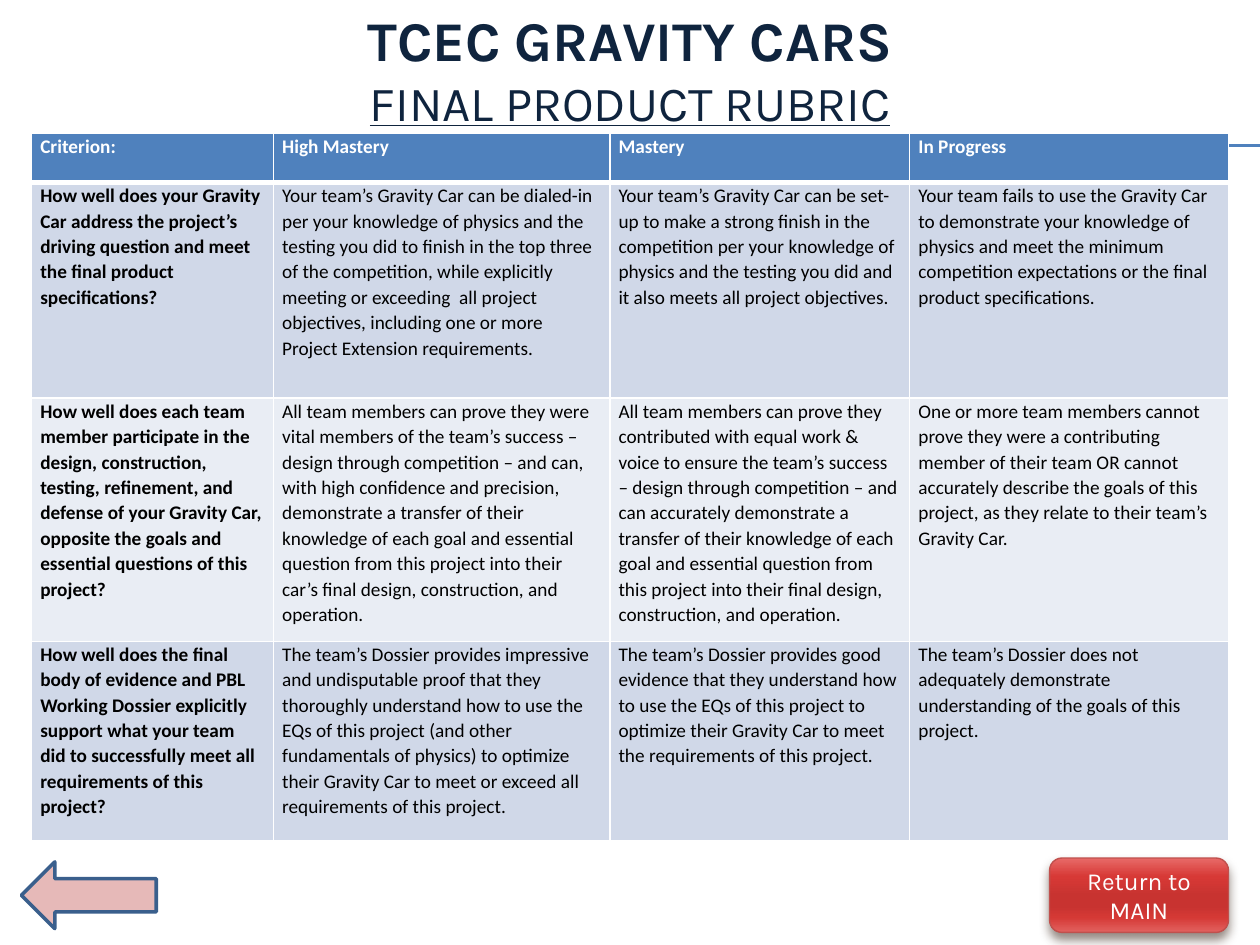
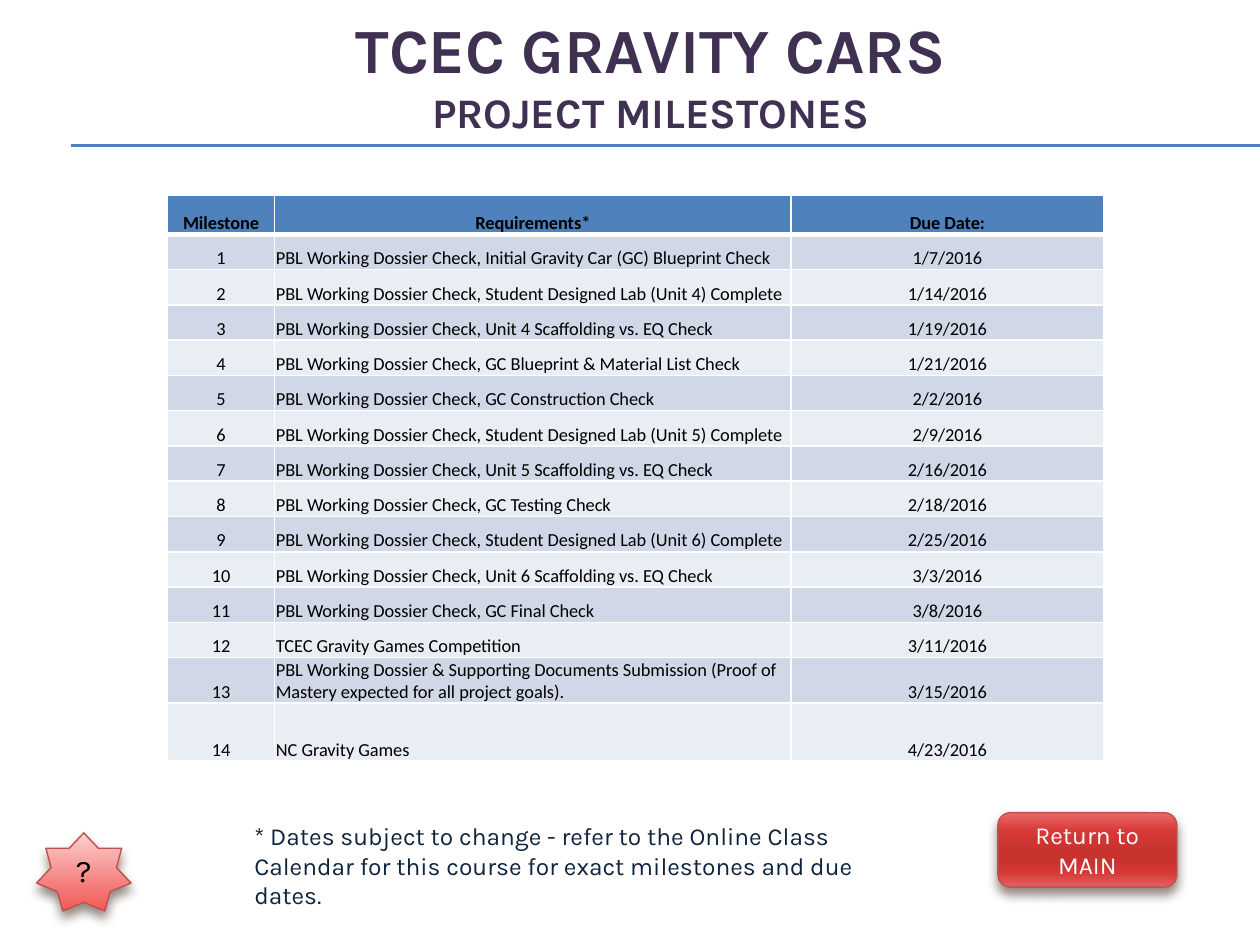
"""Build the gravity car rubric and milestone slides."""
from lxml import etree
from pptx import Presentation
from pptx.dml.color import RGBColor
from pptx.enum.shapes import MSO_CONNECTOR, MSO_SHAPE
from pptx.enum.text import MSO_ANCHOR, PP_ALIGN
from pptx.oxml import parse_xml
from pptx.oxml.ns import nsdecls, qn
from pptx.util import Inches, Pt

LEFT, CENTER = PP_ALIGN.LEFT, PP_ALIGN.CENTER
TOP, MIDDLE, BOTTOM = MSO_ANCHOR.TOP, MSO_ANCHOR.MIDDLE, MSO_ANCHOR.BOTTOM
STRAIGHT = MSO_CONNECTOR.STRAIGHT
ROUNDED, STAR, ARROW = MSO_SHAPE.ROUNDED_RECTANGLE, MSO_SHAPE.STAR_7_POINT, MSO_SHAPE.RIGHT_ARROW

HEADING_FONT, TABLE_FONT = "Karla", "Calibri"
BLUE, NAVY, PURPLE, RED = "4F81BD", "0F243E", "403152", "C0504D"
WHITE, BLACK = "FFFFFF", "000000"
BANDS = ["E9EDF4", "D0D8E8"]
BUTTON_STOPS = [(0, "E86A68"), (25, "D73936"), (50, "C83330"),
                (65, "C83330"), (80, "D53935"), (100, "E26260")]
STAR_STOPS = [(0, "FBD0D0"), (72, "F37876"), (100, "F55956")]
rgb = RGBColor.from_string


def style_text(frame, size, colour, font=HEADING_FONT, bold=False, align=LEFT, anchor=TOP):
    frame.word_wrap = True
    frame.vertical_anchor = anchor
    for paragraph in frame.paragraphs:
        paragraph.alignment = align
        for run in paragraph.runs:
            run.font.size = Pt(size)
            run.font.name = font
            run.font.bold = bold
            run.font.color.rgb = rgb(colour)


def add_glossy(slide, preset, box, stops, label, size, colour):
    glossy = slide.shapes.add_shape(preset, *map(Inches, box))
    glossy.fill.gradient()
    glossy.fill.gradient_angle = 270
    stop_list = glossy.element.spPr.find(".//" + qn("a:gsLst"))
    for old_stop in list(stop_list):
        stop_list.remove(old_stop)
    for position, stop_colour in stops:
        stop = etree.SubElement(stop_list, qn("a:gs"), pos=str(position * 1000))
        etree.SubElement(stop, qn("a:srgbClr"), val=stop_colour)
    glossy.line.color.rgb = rgb(RED)
    glossy.line.width = Pt(0.79)
    glossy.shadow.inherit = False
    glossy.element.spPr.find(qn("a:effectLst")).append(parse_xml(
        f'<a:outerShdw {nsdecls("a")} blurRad="{Pt(6)}" dist="{Pt(4)}" dir="5400000" rotWithShape="0">'
        '<a:srgbClr val="4E3B30"><a:alpha val="60000"/></a:srgbClr></a:outerShdw>'))
    glossy.text_frame.text = label
    style_text(glossy.text_frame, size, colour, align=CENTER, anchor=MIDDLE)


rubric = [
    ["Criterion:", "High Mastery", "Mastery", "In Progress"],
    ["How well does your Gravity Car address the project’s driving question and meet the final product "
     "specifications?",
     "Your team’s Gravity Car can be dialed-in per your knowledge of physics and the testing you did to "
     "finish in the top three of the competition, while explicitly meeting or exceeding  all project "
     "objectives, including one or more Project Extension requirements.",
     "Your team’s Gravity Car can be set-up to make a strong finish in the competition per your knowledge "
     "of physics and the testing you did and it also meets all project objectives.",
     "Your team fails to use the Gravity Car to demonstrate your knowledge of physics and meet the minimum "
     "competition expectations or the final product specifications."],
    ["How well does each team member participate in the design, construction, testing, refinement, and "
     "defense of your Gravity Car, opposite the goals and essential questions of this project?",
     "All team members can prove they were vital members of the team’s success – design through competition "
     "– and can, with high confidence and precision, demonstrate a transfer of their knowledge of each goal "
     "and essential question from this project into their car’s final design, construction, and operation.",
     "All team members can prove they contributed with equal work & voice to ensure the team’s success – "
     "design through competition – and can accurately demonstrate a transfer of their knowledge of each "
     "goal and essential question from this project into their final design, construction, and operation.",
     "One or more team members cannot prove they were a contributing member of their team OR cannot "
     "accurately describe the goals of this project, as they relate to their team’s Gravity Car."],
    ["How well does the final body of evidence and PBL Working Dossier explicitly support what your team "
     "did to successfully meet all requirements of this project?",
     "The team’s Dossier provides impressive and undisputable proof that they thoroughly understand how to "
     "use the EQs of this project (and other fundamentals of physics) to optimize their Gravity Car to meet "
     "or exceed all requirements of this project.",
     "The team’s Dossier provides good evidence that they understand how to use the EQs of this project to "
     "optimize their Gravity Car to meet the requirements of this project.",
     "The team’s Dossier does not adequately demonstrate understanding of the goals of this project."],
]

CHECK = "PBL Working Dossier Check, "
deadlines = [
    (CHECK + "Initial Gravity Car (GC) Blueprint Check", "1/7/2016"),
    (CHECK + "Student Designed Lab (Unit 4) Complete", "1/14/2016"),
    (CHECK + "Unit 4 Scaffolding vs. EQ Check", "1/19/2016"),
    (CHECK + "GC Blueprint & Material List Check", "1/21/2016"),
    (CHECK + "GC Construction Check", "2/2/2016"),
    (CHECK + "Student Designed Lab (Unit 5) Complete", "2/9/2016"),
    (CHECK + "Unit 5 Scaffolding vs. EQ Check", "2/16/2016"),
    (CHECK + "GC Testing Check", "2/18/2016"),
    (CHECK + "Student Designed Lab (Unit 6) Complete", "2/25/2016"),
    (CHECK + "Unit 6 Scaffolding vs. EQ Check", "3/3/2016"),
    (CHECK + "GC Final Check", "3/8/2016"),
    ("TCEC Gravity Games Competition", "3/11/2016"),
    ("PBL Working Dossier & Supporting Documents Submission (Proof of Mastery expected for all project "
     "goals).", "3/15/2016"),
    ("NC Gravity Games", "4/23/2016"),
]
milestones = [["Milestone", "Requirements*", "Due Date:"]]
milestones += [[str(number), *deadline] for number, deadline in enumerate(deadlines, 1)]

pages = [
    dict(subtitle="FINAL PRODUCT RUBRIC", title_box=(0.5, -0.08, 9, 1.25), title_colour=NAVY,
         title_sizes=(32, 28), subtitle_bold=False, rows=rubric, origin=(0.25, 1.06),
         widths=[1.92, 2.67, 2.38, 2.53], heights=[0.39, 1.71, 1.93, 1.58],
         insets=(0.07, 0, 0.07, 0), size=11, header_colour=WHITE, spacing=1.07, anchor=TOP,
         aligns=[LEFT] * 4, header_align=LEFT, bold_first=True, button_at=(8.33, 6.81)),
    dict(subtitle="PROJECT MILESTONES", title_box=(0.5, 0.17, 9.33, 0.83), title_colour=PURPLE,
         title_sizes=(36, 24), subtitle_bold=True, rows=milestones, origin=(1.33, 1.55),
         widths=[0.85, 4.1, 2.48], heights=[0.31] + [0.28] * 12 + [0.36, 0.46],
         insets=(0.01, 0.01, 0.01, 0), size=10.5, header_colour=BLACK, spacing=1, anchor=BOTTOM,
         aligns=[CENTER, LEFT, CENTER], header_align=CENTER, bold_first=False, button_at=(7.92, 6.45)),
]

deck = Presentation()
deck.slide_width, deck.slide_height = Inches(10), Inches(7.5)

for page in pages:
    slide = deck.slides.add_slide(deck.slide_layouts[6])
    for y in (1.15, 1.16):
        rule = slide.shapes.add_connector(STRAIGHT, Inches(0.56), Inches(y), Inches(10), Inches(y))
        rule.line.color.rgb = rgb(BLUE)
        rule.line.width = Pt(0.75)
        etree.SubElement(rule.element.spPr, qn("a:effectLst"))

    title = slide.shapes.add_textbox(*map(Inches, page["title_box"])).text_frame
    title.text = "TCEC GRAVITY CARS\v" + page["subtitle"]
    style_text(title, page["title_sizes"][0], page["title_colour"], bold=True, align=CENTER, anchor=MIDDLE)
    subtitle_font = title.paragraphs[0].runs[1].font
    subtitle_font.size = Pt(page["title_sizes"][1])
    subtitle_font.bold = page["subtitle_bold"]
    subtitle_font.underline = not page["subtitle_bold"]

    rows, widths, heights = page["rows"], page["widths"], page["heights"]
    extent = (*page["origin"], sum(widths), sum(heights))
    grid = slide.shapes.add_table(len(rows), len(widths), *map(Inches, extent)).table
    grid.horz_banding = False
    for column, width in zip(grid.columns, widths):
        column.width = Inches(width)
    for row, height in zip(grid.rows, heights):
        row.height = Inches(height)
    for r, entries in enumerate(rows):
        header = r == 0
        for c, entry in enumerate(entries):
            cell = grid.cell(r, c)
            cell.text_frame.text = entry
            style_text(cell.text_frame, page["size"], page["header_colour"] if header else BLACK,
                       TABLE_FONT, header or (page["bold_first"] and c == 0),
                       page["header_align"] if header else page["aligns"][c])
            cell.text_frame.paragraphs[0].line_spacing = page["spacing"]
            cell.vertical_anchor = page["anchor"]
            cell.margin_left, cell.margin_top, cell.margin_right, cell.margin_bottom = map(
                Inches, page["insets"])
            cell.fill.solid()
            cell.fill.fore_color.rgb = rgb(BLUE if header else BANDS[r % 2])
            borders = [("L", 1), ("R", 1), ("T", 3 if r == 1 else 1), ("B", 3 if header else 1)]
            for place, (side, weight) in enumerate(borders):
                cell._tc.tcPr.insert(place, parse_xml(
                    f'<a:ln{side} {nsdecls("a")} w="{Pt(weight)}"><a:solidFill>'
                    f'<a:srgbClr val="{WHITE}"/></a:solidFill></a:ln{side}>'))

    add_glossy(slide, ROUNDED, (*page["button_at"], 1.42, 0.59), BUTTON_STOPS, "Return to MAIN", 14, WHITE)

rubric_slide, milestone_slide = deck.slides

back_arrow = rubric_slide.shapes.add_shape(ARROW, Inches(0.17), Inches(6.84), Inches(1.07), Inches(0.53))
back_arrow.rotation = 180
back_arrow.shadow.inherit = False
back_arrow.fill.solid()
back_arrow.fill.fore_color.rgb = rgb("E6B9B8")
back_arrow.line.color.rgb = rgb("3A5F8C")
back_arrow.line.width = Pt(2)

add_glossy(milestone_slide, STAR, (0.29, 6.61, 0.75, 0.62), STAR_STOPS, "?", 18, BLACK)

date_note = milestone_slide.shapes.add_textbox(Inches(1.92), Inches(6.47), Inches(5.42), Inches(0.57)).text_frame
date_note.text = ("* Dates subject to change - refer to the Online Class Calendar for this course "
                  "for exact milestones and due dates.")
style_text(date_note, 14, NAVY)

deck.save("out.pptx")
